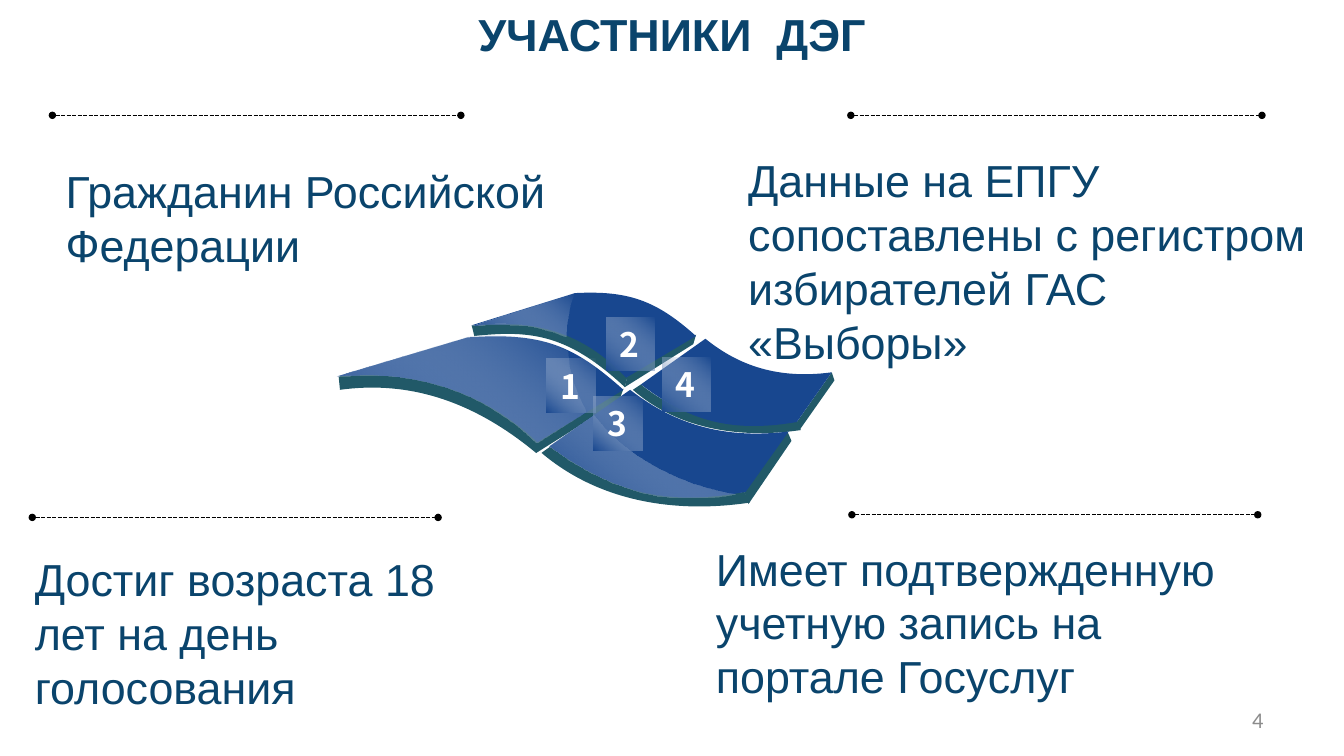
from lxml import etree
from pptx import Presentation
from pptx import util as u
from pptx.dml.color import RGBColor
from pptx.enum import dml, shapes, text
from pptx.oxml import ns

NAVY = RGBColor(0x0A, 0x44, 0x6C)
BLUE = RGBColor(0x18, 0x47, 0x8F)
TEAL = RGBColor(0x21, 0x59, 0x68)
GREY = RGBColor(0x8C, 0x8C, 0x8C)
WHITE = RGBColor(0xFF, 0xFF, 0xFF)
BLACK = RGBColor(0, 0, 0)

RIBBON_UNITS = 371  # width of the ribbon in its own grid
BADGE_SIZE = (36, 40)

# Tiles on the ribbon grid: a pair is a corner, six numbers are a Bezier curve
TILES = [
    {"number": "2", "badge": (201, 20),
     "edge": [(101, 26), (153, 21, 181, 30, 217, 64), (215, 72), (174, 34, 147, 29, 103, 34)],
     "side": [(217, 64), (268, 33), (266, 40), (215, 72)],
     "face": [(178, 2), (217, 0, 238, 7, 268, 34), (216, 65), (184, 31, 148, 21, 101, 26)],
     "gloss": [(177, 2), (173, 12, 171, 23, 171, 34), (151, 25, 128, 23, 101, 26)]},
    {"number": "1", "badge": (157, 51),
     "edge": [(2, 64), (54, 58, 105, 72, 150, 111), (149, 121), (96, 77, 47, 68, 3, 74)],
     "side": [(149, 112), (214, 73), (211, 82), (149, 121)],
     "face": [(98, 35), (154, 31, 177, 41, 214, 74), (150, 113), (109, 74, 57, 59, 1, 64)],
     "gloss": [(117, 34), (140, 34, 156, 37, 172, 45), (173, 61, 178, 76, 186, 90), (149, 113),
               (109, 74, 57, 59, 0, 64), (98, 35), (105, 34, 111, 34, 117, 34)]},
    {"number": "4", "badge": (243, 50),
     "edge": [(221, 74), (253, 102, 298, 111, 346, 104), (343, 97), (295, 105, 255, 93, 227, 70)],
     "side": [(343, 98), (369, 61), (371, 67), (345, 104)],
     "face": [(275, 36), (296, 53, 325, 67, 369, 61), (343, 98), (291, 107, 260, 95, 227, 70)]},
    {"number": "3", "badge": (192, 79),
     "edge": [(153, 121), (193, 155, 248, 167, 308, 158), (304, 150), (244, 160, 195, 144, 160, 116)],
     "side": [(304, 150), (336, 105), (339, 112), (307, 159)],
     "face": [(219, 74), (246, 95, 282, 112, 337, 105), (305, 150), (241, 162, 202, 147, 159, 116)],
     "gloss": [(192, 93), (214, 122, 252, 144, 297, 151), (238, 161, 201, 146, 159, 116)]},
]

# Text box in cm, rule as (right shift, height above the box, length), paragraphs
CRITERIA = [
    ((0.99, 2.97, 10.11, 2.31), (0, 0.79, 7.72), ["Гражданин Российской Федерации"]),
    ((0.41, 10.31, 9.53, 3.33), (0.2, 0.53, 7.67),
     ["Достиг возраста 18 лет на день голосования"]),
    ((13.28, 10.11, 10.59, 3.33), (2.82, 0.38, 7.67),
     ["Имеет подтвержденную", "учетную запись на портале Госуслуг"]),
    ((13.89, 2.77, 11.51, 4.37), (2.19, 0.59, 7.77),
     ["Данные на ЕПГУ сопоставлены с регистром избирателей ГАС «Выборы»"]),
]


def write(frame, lines, size, color, font="Arial", bold=False, align=None):
    frame.text = "\n".join(lines)
    for para in frame.paragraphs:
        para.alignment = align
        for span in para.runs:
            span.font.name = font
            span.font.size = u.Pt(size)
            span.font.bold = bold
            span.font.color.rgb = color


def paint(shape, color=None):
    """Fill with a colour, or with a gradient from clear white to blue."""
    shape.shadow.inherit = False
    shape.line.fill.background()
    if color is not None:
        shape.fill.solid()
        shape.fill.fore_color.rgb = color
        return
    shape.fill.gradient()
    shape.fill.gradient_angle = 230
    for stop, position, tone in zip(shape.fill.gradient_stops, (0, 1), (WHITE, BLUE)):
        stop.position = position
        stop.color.rgb = tone
    clear = shape.element.spPr.find(".//" + ns.qn("a:srgbClr"))
    etree.SubElement(clear, ns.qn("a:alpha"), val="0")


def add_outline(group, outline, place):
    """Join the corners with lines, then bend the sides that are curves."""
    start, *corners = [place(*part[-2:]) for part in outline]
    builder = group.shapes.build_freeform(*start)
    builder.add_line_segments(corners, close=True)
    shape = builder.convert_to_shape()
    sides = shape.element.spPr.findall(".//" + ns.qn("a:lnTo"))
    for side, part in zip(sides, outline[1:]):
        if len(part) == 2:
            continue
        curve = etree.Element(ns.qn("a:cubicBezTo"))
        for pair in (part[:2], part[2:4], part[4:]):
            x, y = place(*pair)
            etree.SubElement(curve, ns.qn("a:pt"), x=str(x - shape.left), y=str(y - shape.top))
        side.getparent().replace(side, curve)
    return shape


def add_title(page, left, top, width, height):
    title = page.shapes.title
    title.left, title.top, title.width, title.height = left, top, width, height
    frame = title.text_frame
    write(frame, ["УЧАСТНИКИ  ДЭГ"], 24, NAVY, bold=True, align=text.PP_ALIGN.CENTER)
    frame.auto_size = text.MSO_AUTO_SIZE.NONE
    frame.vertical_anchor = text.MSO_ANCHOR.TOP


def add_ribbon(page, left, top, width):
    unit = width / RIBBON_UNITS

    def place(x, y):
        return round(left + x * unit), round(top + y * unit)

    for tile in TILES:
        group = page.shapes.add_group_shape()
        # Curved surfaces
        for part, color in (("edge", TEAL), ("side", TEAL), ("face", BLUE), ("gloss", None)):
            if part in tile:
                paint(add_outline(group, tile[part], place), color)
        # Number badge
        badge = group.shapes.add_shape(shapes.MSO_SHAPE.RECTANGLE, *place(*tile["badge"]),
                                       *(round(side * unit) for side in BADGE_SIZE))
        paint(badge)
        frame = badge.text_frame
        frame.word_wrap = False
        frame.vertical_anchor = text.MSO_ANCHOR.TOP
        write(frame, [tile["number"]], 18, WHITE, "Noto Sans CJK SC", True, text.PP_ALIGN.LEFT)


def add_criterion(page, left, top, width, height, rule, lines):
    # Dashed rule with small round ends
    shift, rise, length = (u.Cm(value) for value in rule)
    start, level = left + shift, top - rise
    line = page.shapes.add_connector(shapes.MSO_CONNECTOR.STRAIGHT,
                                     start, level, start + length, level)
    line.line.color.rgb = BLACK
    line.line.width = u.Pt(0.75)
    line.line.dash_style = dml.MSO_LINE.SQUARE_DOT
    outline = line.element.spPr.find(ns.qn("a:ln"))
    for end in ("a:headEnd", "a:tailEnd"):
        etree.SubElement(outline, ns.qn(end), type="oval", w="sm", len="sm")
    etree.SubElement(line.element.spPr, ns.qn("a:effectLst"))
    # Wording
    box = page.shapes.add_textbox(left, top, width, height)
    box.text_frame.word_wrap = True
    write(box.text_frame, lines, 24, NAVY)


def add_page_number(page, left, top, width, height):
    box = page.shapes.add_textbox(left, top, width, height)
    box.text_frame.word_wrap = True
    box.text_frame.vertical_anchor = text.MSO_ANCHOR.MIDDLE
    write(box.text_frame, ["4"], 12, GREY, "Calibri", align=text.PP_ALIGN.RIGHT)


def main():
    deck = Presentation()
    deck.slide_width, deck.slide_height = u.Cm(25.4), u.Cm(14.29)
    page = deck.slides.add_slide(deck.slide_layouts[5])
    add_page_number(page, u.Cm(18.21), u.Cm(13.23), u.Cm(5.92), u.Cm(0.76))
    add_title(page, 0, 0, deck.slide_width, u.Cm(1.27))
    add_ribbon(page, u.Cm(6.35), u.Cm(5.49), u.Cm(9.42))
    for box, rule, lines in CRITERIA:
        add_criterion(page, *(u.Cm(value) for value in box), rule, lines)
    deck.save("out.pptx")


if __name__ == "__main__":
    main()
